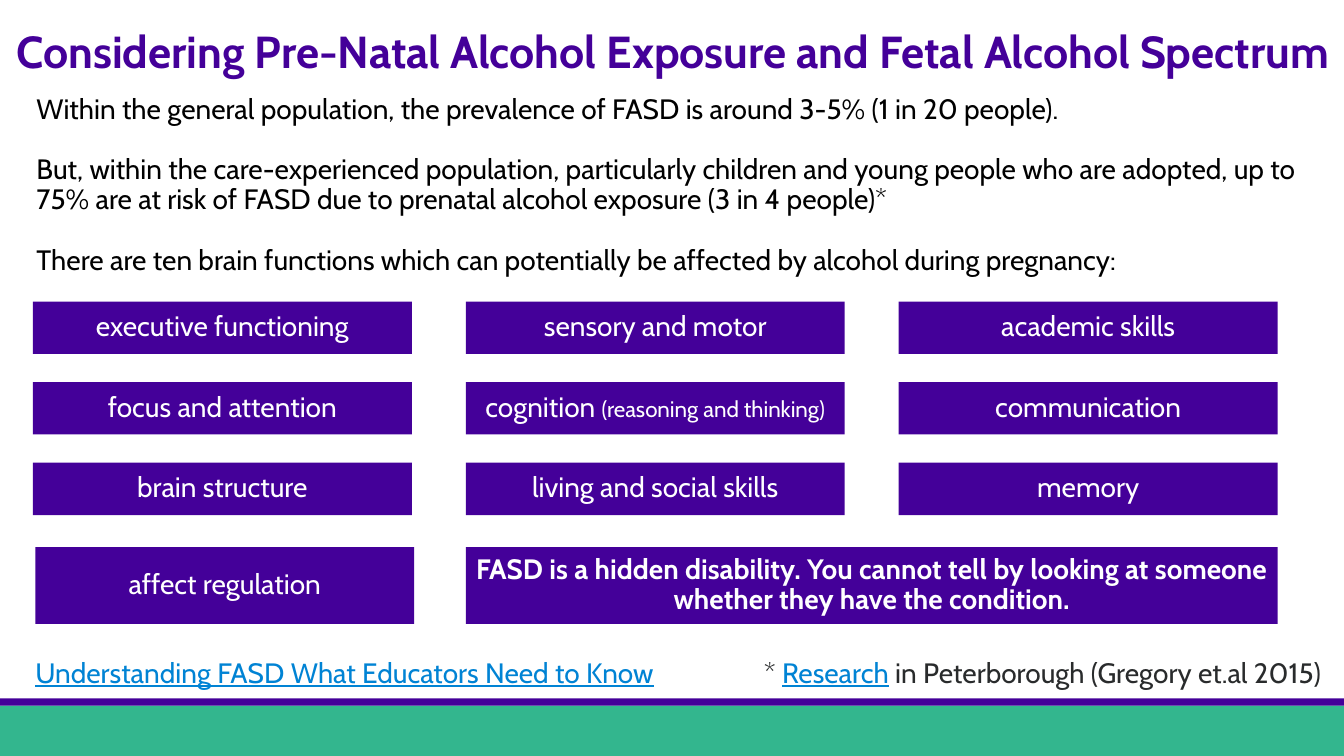
import pptx
import pptx.util
import pptx.dml.color
import pptx.enum.shapes
import pptx.enum.text
from pptx.util import Cm, Pt

TITLE = "Considering Pre-Natal Alcohol Exposure and Fetal Alcohol Spectrum"
INTRO = [
    "Within the general population, the prevalence of FASD is around 3-5% (1 in 20 people).",
    "But, within the care-experienced population, particularly children and young people "
    "who are adopted, up to 75% are at risk of FASD due to prenatal alcohol exposure "
    "(3 in 4 people)*",
    "There are ten brain functions which can potentially be affected by alcohol during pregnancy:",
]
# Each paragraph is a list of (wording, style) runs.
BRAIN_FUNCTIONS = [
    [[("executive functioning", "box")], [("sensory and motor", "box")],
     [("academic skills", "box")]],
    [[("focus and attention", "box")],
     [("cognition ", "box"), ("(reasoning and thinking)", "box_note")],
     [("communication", "box")]],
    [[("brain structure", "box")], [("living and social skills", "box")],
     [("memory", "box")]],
]
LAST_FUNCTION = [("affect regulation", "box")]
HIDDEN_DISABILITY = [("FASD is a hidden disability. You cannot tell by looking at someone "
                      "whether they have the condition.", "box_strong")]
GUIDE_LINK = [("Understanding FASD What Educators Need to Know", "link")]
RESEARCH_NOTE = [("* ", "note"), ("Research", "link"),
                 (" in Peterborough (Gregory et.al 2015)", "note")]

THEME = {
    "font": "Cabin",
    "line_spacing": 0.9,
    "paragraph_gap": Pt(21.6),
    "purple": "440099",
    "green": "33B68E",
    "styles": {
        "title": ("440099", {"size": Pt(32), "bold": True}),
        "intro": ("000000", {"size": Pt(20)}),
        "box": ("FFFFFF", {"size": Pt(20)}),
        "box_note": ("FFFFFF", {"size": Pt(16)}),
        "box_strong": ("FFFFFF", {"size": Pt(20), "bold": True}),
        "link": ("0083D4", {"size": Pt(20), "underline": True}),
        "note": ("292B2C", {"size": Pt(20)}),
    },
}
FRAME_FORMAT = {"margin_left": 0, "margin_right": 0, "margin_top": 0, "margin_bottom": 0,
                "word_wrap": True, "auto_size": pptx.enum.text.MSO_AUTO_SIZE.NONE}

SLIDE_WIDTH, SLIDE_HEIGHT = Cm(33.87), Cm(19.05)
GRID_LEFT, GRID_TOP = Cm(0.83), Cm(7.6)
COLUMN_PITCH, ROW_PITCH = Cm(10.91), Cm(2.03)
BOX_WIDTH, BOX_HEIGHT = Cm(9.55), Cm(1.32)
LAST_ROW_TOP, LAST_ROW_HEIGHT = Cm(13.79), Cm(1.93)
FOOTNOTE_TOP = Cm(16.61)
GREEN_HEIGHT, PURPLE_HEIGHT = Cm(1.27), Cm(0.18)

ALIGN = pptx.enum.text.PP_ALIGN
ANCHOR = pptx.enum.text.MSO_ANCHOR


def set_all(target, values):
    for name, value in values.items():
        setattr(target, name, value)


def color(code):
    return pptx.dml.color.RGBColor.from_string(code)


def write(frame, paragraphs, align=ALIGN.LEFT, anchor=ANCHOR.TOP):
    """Fill a text frame with paragraphs, each a list of (wording, style) runs."""
    set_all(frame, {**FRAME_FORMAT, "vertical_anchor": anchor})
    for index, runs in enumerate(paragraphs):
        paragraph = frame.add_paragraph() if index else frame.paragraphs[0]
        set_all(paragraph, {"alignment": align, "line_spacing": THEME["line_spacing"],
                            "space_before": THEME["paragraph_gap"] if index else 0})
        for wording, style in runs:
            run = paragraph.add_run()
            run.text = wording
            ink, font_format = THEME["styles"][style]
            set_all(run.font, {"name": THEME["font"], **font_format})
            run.font.color.rgb = color(ink)


def add_rectangle(slide, left, top, width, height, fill):
    rectangle = slide.shapes.add_shape(
        pptx.enum.shapes.MSO_SHAPE.RECTANGLE, left, top, width, height)
    rectangle.shadow.inherit = False
    rectangle.fill.solid()
    rectangle.fill.fore_color.rgb = color(fill)
    rectangle.line.fill.background()
    return rectangle


def add_box(slide, runs, left, top, width, height):
    box = add_rectangle(slide, left, top, width, height, THEME["purple"])
    write(box.text_frame, [runs], ALIGN.CENTER, ANCHOR.MIDDLE)


def add_text(slide, paragraphs, left, top, width, height):
    write(slide.shapes.add_textbox(left, top, width, height).text_frame, paragraphs)


def main():
    deck = pptx.Presentation()
    set_all(deck, {"slide_width": SLIDE_WIDTH, "slide_height": SLIDE_HEIGHT})
    slide = deck.slides.add_slide(deck.slide_layouts.get_by_name("Title Only"))

    green_top = SLIDE_HEIGHT - GREEN_HEIGHT
    add_rectangle(slide, 0, green_top, SLIDE_WIDTH, GREEN_HEIGHT, THEME["green"])
    add_rectangle(slide, 0, green_top - PURPLE_HEIGHT, SLIDE_WIDTH, PURPLE_HEIGHT,
                  THEME["purple"])

    title = slide.shapes.title
    set_all(title, {"left": Cm(0.41), "top": Cm(0.74), "width": Cm(34.06), "height": Cm(1.32)})
    write(title.text_frame, [[(TITLE, "title")]])
    add_text(slide, [[(sentence, "intro")] for sentence in INTRO],
             Cm(0.92), Cm(2.39), Cm(32.03), Cm(4.24))

    for row, functions in enumerate(BRAIN_FUNCTIONS):
        for column, runs in enumerate(functions):
            add_box(slide, runs, GRID_LEFT + column * COLUMN_PITCH,
                    GRID_TOP + row * ROW_PITCH, BOX_WIDTH, BOX_HEIGHT)
    add_box(slide, LAST_FUNCTION, Cm(0.89), LAST_ROW_TOP, BOX_WIDTH, LAST_ROW_HEIGHT)
    add_box(slide, HIDDEN_DISABILITY, GRID_LEFT + COLUMN_PITCH, LAST_ROW_TOP,
            COLUMN_PITCH + BOX_WIDTH, LAST_ROW_HEIGHT)

    add_text(slide, [GUIDE_LINK], Cm(0.89), FOOTNOTE_TOP, Cm(16.54), Cm(0.71))
    add_text(slide, [RESEARCH_NOTE], Cm(19.25), FOOTNOTE_TOP, Cm(14.6), Cm(1.32))
    deck.save("out.pptx")


if __name__ == "__main__":
    main()
